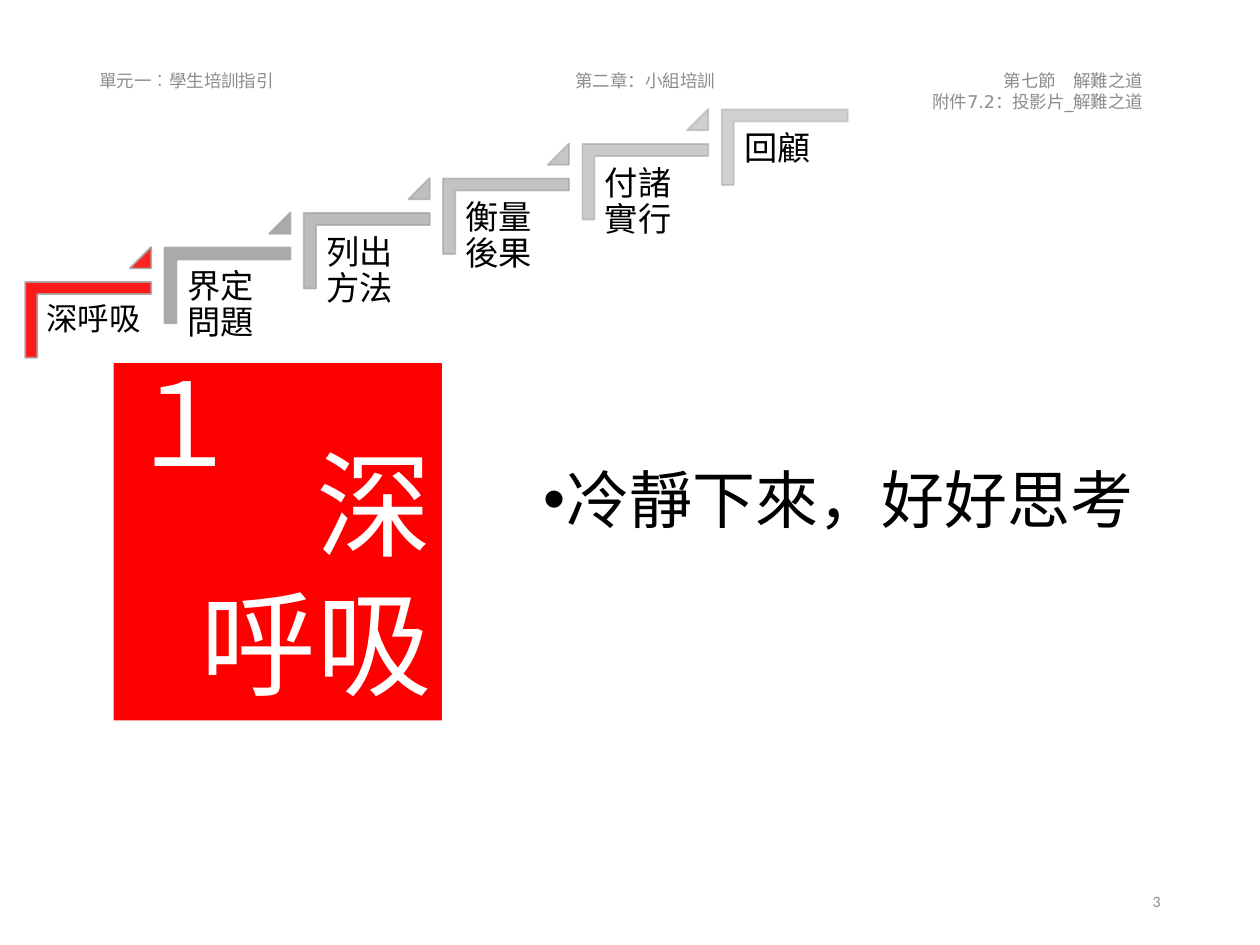
from dataclasses import dataclass
from typing import Optional

from lxml.etree import SubElement
from pptx import Presentation
from pptx.dml.color import RGBColor
from pptx.enum.shapes import MSO_SHAPE as Shape
from pptx.enum.text import MSO_ANCHOR as Anchor, MSO_AUTO_SIZE as AutoSize, PP_ALIGN as Align
from pptx.oxml.ns import qn
from pptx.util import Pt


@dataclass(frozen=True)
class Theme:
    red: str = "FF0000"
    gray: str = "A5A5A5"
    solid_gray: str = "AAAAAA"
    muted: str = "8C8C8C"
    black: str = "000000"
    white: str = "FFFFFF"
    body_font: str = "Calibri"
    header_font: str = "DejaVu Sans"
    number_size: float = 9
    header_size: float = 10
    first_step_size: float = 18
    step_size: float = 19
    body_size: float = 36
    banner_size: float = 66


@dataclass(frozen=True)
class Box:
    left: float
    top: float
    width: float
    height: float

    def lengths(self) -> tuple:
        return Pt(self.left), Pt(self.top), Pt(self.width), Pt(self.height)

    def shifted(self, right: float, down: float) -> "Box":
        return Box(self.left + right, self.top + down, self.width, self.height)


@dataclass(frozen=True)
class TextStyle:
    size: float
    color: str
    font: str = Theme.body_font
    align: Align = Align.LEFT
    anchor: Anchor = Anchor.TOP
    inset: Optional[float] = None
    line_spacing: Optional[float] = None


@dataclass(frozen=True)
class Step:
    label: str
    color: str = Theme.gray
    size: float = Theme.step_size
    inset: float = 5.76
    solid: bool = False


@dataclass(frozen=True)
class Header:
    text: str
    box: Box
    align: Align


THEME = Theme()
STEPS = [
    Step("深呼吸", THEME.red, THEME.first_step_size, 5),
    Step("界定問題", THEME.solid_gray, solid=True),
    Step("列出方法"),
    Step("衡量後果"),
    Step("付諸實行"),
    Step("回顧"),
]
STEP_RIGHT, STEP_DOWN = 79.6, -19.73
CORNER = Box(28.8, 146.8, 43.2, 72)
LABEL = Box(21.6, 168.3, 64.8, 56.9)
TRIANGLE = Box(74.2, 141.2, 12.2, 12.2)
HEADERS = [
    Header("單元一︰學生培訓指引", Box(49.7, 31.7, 243.4, 28.8), Align.LEFT),
    Header("第二章：小組培訓", Box(247, 31.7, 243.4, 28.8), Align.CENTER),
    Header("第七節　解難之道\n附件7.2：投影片_解難之道", Box(416.9, 37.4, 243.4, 28.8), Align.RIGHT),
]


def write_text(shape, text: str, style: TextStyle) -> None:
    frame = shape.text_frame
    frame.text = text
    frame.word_wrap = True
    frame.auto_size = AutoSize.NONE
    frame.vertical_anchor = style.anchor
    if style.inset is not None:
        frame.margin_left = frame.margin_right = Pt(style.inset)
        frame.margin_top = frame.margin_bottom = Pt(style.inset)
    for paragraph in frame.paragraphs:
        paragraph.alignment = style.align
        if style.line_spacing:
            paragraph.line_spacing = style.line_spacing
        for run in paragraph.runs:
            run.font.size = Pt(style.size)
            run.font.name = style.font
            run.font.color.rgb = RGBColor.from_string(style.color)


def add_text(slide, text: str, box: Box, style: TextStyle) -> None:
    write_text(slide.shapes.add_textbox(*box.lengths()), text, style)


def add_filled(slide, kind: Shape, box: Box, color: str):
    shape = slide.shapes.add_shape(kind, *box.lengths())
    shape.shadow.inherit = False
    shape.fill.solid()
    shape.fill.fore_color.rgb = RGBColor.from_string(color)
    shape.line.fill.background()
    return shape


def add_step_shape(slide, kind: Shape, box: Box, step: Step, opacity: int):
    """Draw a gray-outlined step part; opacity (percent) spares solid fills."""
    shape = add_filled(slide, kind, box, step.color)
    shape.line.color.rgb = RGBColor.from_string(THEME.gray)
    shape.line.width = Pt(1)
    fill_color, line_color = shape.element.spPr.iter(qn("a:srgbClr"))
    for color in [line_color] if step.solid else [fill_color, line_color]:
        SubElement(color, qn("a:alpha"), val=str(opacity * 1000))
    return shape


def add_staircase(slide) -> None:
    for index, step in enumerate(STEPS):
        offset = index * STEP_RIGHT, index * STEP_DOWN
        opacity = 90 - 8 * index
        corner = add_step_shape(slide, Shape.CORNER, CORNER.shifted(*offset), step, opacity)
        corner.rotation = 90
        corner.adjustments[0] = corner.adjustments[1] = 0.16
        style = TextStyle(step.size, THEME.black, inset=step.inset, line_spacing=0.9)
        add_text(slide, step.label, LABEL.shifted(*offset), style)
        if index < len(STEPS) - 1:
            triangle = add_step_shape(
                slide, Shape.ISOSCELES_TRIANGLE, TRIANGLE.shifted(*offset), step, opacity - 4)
            triangle.adjustments[0] = 1


def fill_body(body) -> None:
    body.left, body.top, body.width, body.height = Box(303.1, 264.2, 374.4, 73.4).lengths()
    write_text(body, "冷靜下來，好好思考", TextStyle(THEME.body_size, THEME.black, line_spacing=0.9))
    paragraph = body.text_frame.paragraphs[0]
    paragraph.space_before = Pt(7.5)
    properties = paragraph._p.get_or_add_pPr()
    properties.set("marL", str(Pt(13.5)))
    properties.set("indent", str(-Pt(13.5)))
    SubElement(properties, qn("a:buFont"), typeface="Arial")
    SubElement(properties, qn("a:buChar"), char="•")


def add_banner(slide) -> None:
    banner = add_filled(slide, Shape.RECTANGLE, Box(65, 207.5, 187.6, 204.2), THEME.red)
    write_text(banner, "深\n呼吸", TextStyle(
        THEME.banner_size, THEME.white, align=Align.RIGHT, anchor=Anchor.BOTTOM, inset=5.76))
    add_text(slide, "１", Box(65, 197.3, 79.2, 87.1),
             TextStyle(THEME.banner_size, THEME.white, THEME.header_font))


def main() -> None:
    presentation = Presentation()
    presentation.slide_width, presentation.slide_height = Pt(720), Pt(540)
    slide = presentation.slides.add_slide(presentation.slide_layouts[1])
    title = slide.shapes.title.element
    title.getparent().remove(title)
    fill_body(slide.placeholders[1])
    for header in HEADERS:
        add_text(slide, header.text, header.box, TextStyle(
            THEME.header_size, THEME.muted, THEME.header_font, header.align, Anchor.MIDDLE))
    add_staircase(slide)
    add_banner(slide)
    add_text(slide, "3", Box(508.3, 500.5, 162, 28.8), TextStyle(
        THEME.number_size, THEME.muted, align=Align.RIGHT, anchor=Anchor.MIDDLE))
    presentation.save("out.pptx")


if __name__ == "__main__":
    main()
